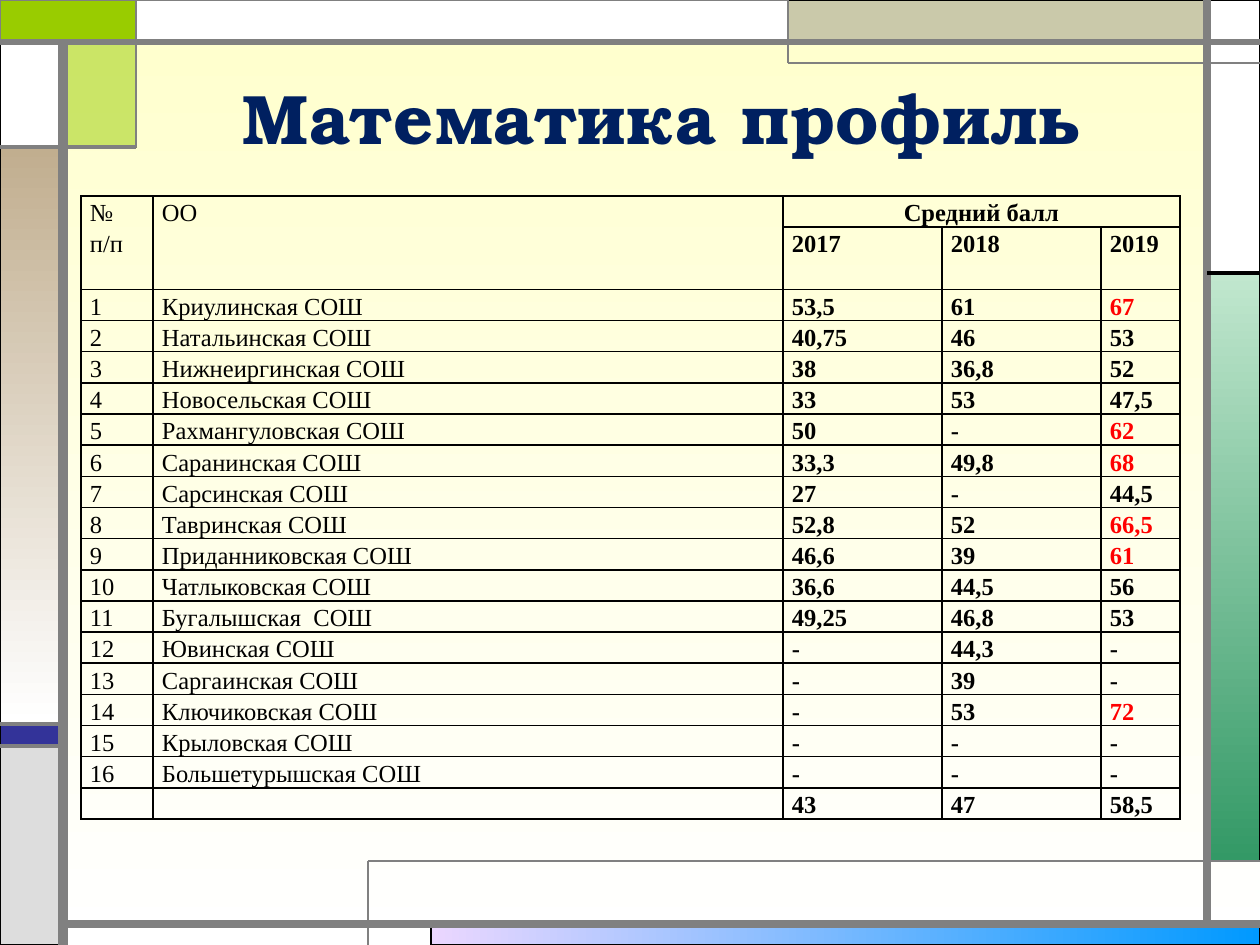
from dataclasses import dataclass
from lxml.etree import SubElement
from pptx import Presentation
from pptx.dml.color import RGBColor
from pptx.enum.shapes import MSO_CONNECTOR, MSO_SHAPE
from pptx.enum.text import MSO_ANCHOR, PP_ALIGN
from pptx.oxml.ns import qn
from pptx.util import Emu, Pt

PX = 914400 / 126  # EMU in one px


@dataclass(frozen=True)
class Theme:
    ink: str = "000000"
    frame: str = "808080"
    white: str = "FFFFFF"
    cream: str = "FFFFCC"
    lime: str = "99CC00"
    khaki: str = "CAC9AA"
    tan: str = "C1AE8F"
    silver: str = "DDDDDD"
    indigo: str = "333399"
    mint: str = "C1E7CE"
    green: str = "339966"
    lilac: str = "EBD7FF"
    blue: str = "0099FF"
    navy: str = "002060"
    red: str = "FF0000"
    title_font: str = "TeX Gyre Bonum"
    table_font: str = "Times New Roman"
    title_size: int = 40
    table_size: int = 14


theme = Theme()


def box(*lengths):
    return [Emu(round(length * PX)) for length in lengths]


def paint(fill, *colours, angle=0):
    """One colour gives a solid fill, two give a linear gradient."""
    if len(colours) == 1:
        fill.solid()
        fill.fore_color.rgb = RGBColor.from_string(colours[0])
        return
    fill.gradient()
    fill.gradient_angle = angle
    for stop, colour in zip(fill.gradient_stops, colours):
        stop.color.rgb = RGBColor.from_string(colour)


prs = Presentation()
prs.slide_width, prs.slide_height = box(1260, 945)
slide = prs.slides.add_slide(prs.slide_layouts[5])
paint(slide.background.fill, theme.cream, theme.white, angle=270)

# Coloured panels around the page: left, top, width, height, colours, angle
panels = [
    (431, 924, 829, 21, [theme.lilac, theme.blue], 0),
    (1207, 273, 53, 588, [theme.mint, theme.green], 270),
    (0, 724, 63, 22, [theme.indigo], 0),
    (0, 746, 63, 199, [theme.silver], 0),
    (1207, 0, 53, 273, [theme.white], 0),
    (788, 0, 419, 42, [theme.khaki], 0),
    (63, 42, 73, 105, [theme.lime], 0),
    (0, 147, 63, 577, [theme.tan, theme.white], 270),
    (0, 42, 63, 105, [theme.white], 0),
    (0, 0, 136, 42, [theme.lime], 0),
    (136, 0, 652, 42, [theme.white], 0),
]
for left, top, width, height, colours, angle in panels:
    panel = slide.shapes.add_shape(MSO_SHAPE.RECTANGLE, *box(left, top, width, height))
    panel.shadow.inherit = False
    paint(panel.fill, *colours, angle=angle)
    on_top_edge = top == 0 and left < 788
    paint(panel.line.fill, theme.frame if on_top_edge else theme.ink)
    panel.line.width = Pt(1.5 if (left, top) == (0, 0) else 0.75)
    if (left, top) == (63, 42):  # half-transparent corner
        lime = panel.fill._xPr.find(".//" + qn("a:srgbClr"))
        SubElement(lime, qn("a:alpha"), val="50000")

# Frame lines: from x, y, to x, y, weight, colour
rules = [
    (63, 945, 63, 42, 6, theme.frame),
    (63, 924, 1260, 924, 4.5, theme.frame),
    (1207, 924, 1207, 0, 4.5, theme.frame),
    (0, 42, 1260, 42, 3, theme.frame),
    (1260, 63, 788, 63, 1.5, theme.frame),
    (788, 63, 788, 0, 1.5, theme.frame),
    (1207, 273, 1260, 273, 2.25, theme.ink),
    (136, 0, 136, 147, 1.5, theme.frame),
    (136, 147, 0, 147, 2.25, theme.frame),
    (368, 945, 368, 861, 1.5, theme.frame),
    (368, 861, 1260, 861, 1.5, theme.frame),
    (63, 724, 0, 724, 2.25, theme.frame),
    (63, 746, 0, 746, 2.25, theme.frame),
]
for *ends, weight, colour in rules:
    rule = slide.shapes.add_connector(MSO_CONNECTOR.STRAIGHT, *box(*ends))
    paint(rule.line.fill, colour)
    rule.line.width = Pt(weight)
    SubElement(rule.element.spPr, qn("a:effectLst"))

# Title, in front of the frame
title = slide.shapes.title
title.element.getparent().append(title.element)
title.left, title.top, title.width, title.height = box(126, 38, 1071, 157)
title.text_frame.text = "Математика профиль"
title.text_frame.vertical_anchor = MSO_ANCHOR.MIDDLE
heading = title.text_frame.paragraphs[0]
heading.alignment = PP_ALIGN.CENTER
heading.font.name = theme.title_font
heading.font.size = Pt(theme.title_size)
heading.font.bold = True
paint(heading.font.fill, theme.navy)
letters = heading.runs[0]._r.get_or_add_rPr()
letters.set("spc", "50")
outline = SubElement(letters, qn("a:ln"), w=str(Pt(0.9)))
SubElement(SubElement(outline, qn("a:solidFill")), qn("a:srgbClr"), val=theme.ink)

# Average scores by school
schools = [
    ("Криулинская СОШ", "53,5", "61", "67"),
    ("Натальинская СОШ", "40,75", "46", "53"),
    ("Нижнеиргинская СОШ", "38", "36,8", "52"),
    ("Новосельская СОШ", "33", "53", "47,5"),
    ("Рахмангуловская СОШ", "50", "-", "62"),
    ("Саранинская СОШ", "33,3", "49,8", "68"),
    ("Сарсинская СОШ", "27", "-", "44,5"),
    ("Тавринская СОШ", "52,8", "52", "66,5"),
    ("Приданниковская СОШ", "46,6", "39", "61"),
    ("Чатлыковская СОШ", "36,6", "44,5", "56"),
    ("Бугалышская  СОШ", "49,25", "46,8", "53"),
    ("Ювинская СОШ", "-", "44,3", "-"),
    ("Саргаинская СОШ", "-", "39", "-"),
    ("Ключиковская СОШ", "-", "53", "72"),
    ("Крыловская СОШ", "-", "-", "-"),
    ("Большетурышская СОШ", "-", "-", "-"),
]
rows = [("№ п/п", "ОО", "Средний балл", "", ""), ("", "", "2017", "2018", "2019")]
rows += [(str(number), *school) for number, school in enumerate(schools, 1)]
rows.append(("", "", "43", "47", "58,5"))
col_widths = box(72, 630, 159, 159, 79)
row_heights = box(31, 62, *[31] * (len(rows) - 2))

scores = slide.shapes.add_table(
    len(rows), len(col_widths), *box(81, 196, 1099, 624)).table
scores.first_row = scores.horz_banding = False
for column, width in zip(scores.columns, col_widths):
    column.width = width
for row, height in zip(scores.rows, row_heights):
    row.height = height

for r, row in enumerate(rows):
    for c, text in enumerate(row):
        cell = scores.cell(r, c)
        cell.margin_left = cell.margin_right = box(9)[0]
        cell.margin_top = cell.margin_bottom = 0
        cell.text = text
        entry = cell.text_frame.paragraphs[0]
        entry.alignment = PP_ALIGN.CENTER if (r, c) == (0, 2) else PP_ALIGN.JUSTIFY
        entry.line_spacing = 1.15
        entry.font.name = theme.table_font
        entry.font.size = Pt(theme.table_size)
        entry.font.bold = c >= 2
        # 2019 results above 60 stand out
        high = c == 4 and r >= 2 and text != "-" and float(text.replace(",", ".")) > 60
        paint(entry.font.fill, theme.red if high else theme.ink)
        if not text:
            SubElement(entry._p, qn("a:endParaRPr"), sz=str(theme.table_size * 100))
        borders = cell._tc.get_or_add_tcPr()
        for side in ("a:lnL", "a:lnR", "a:lnT", "a:lnB"):
            edge = SubElement(borders, qn(side), w=str(Pt(1)))
            SubElement(SubElement(edge, qn("a:solidFill")), qn("a:srgbClr"), val=theme.ink)
        cell.fill.background()

# Header spans
for first, last in [((0, 0), (1, 0)), ((0, 1), (1, 1)), ((0, 2), (0, 4))]:
    scores.cell(*first).merge(scores.cell(*last))

prs.save("out.pptx")
